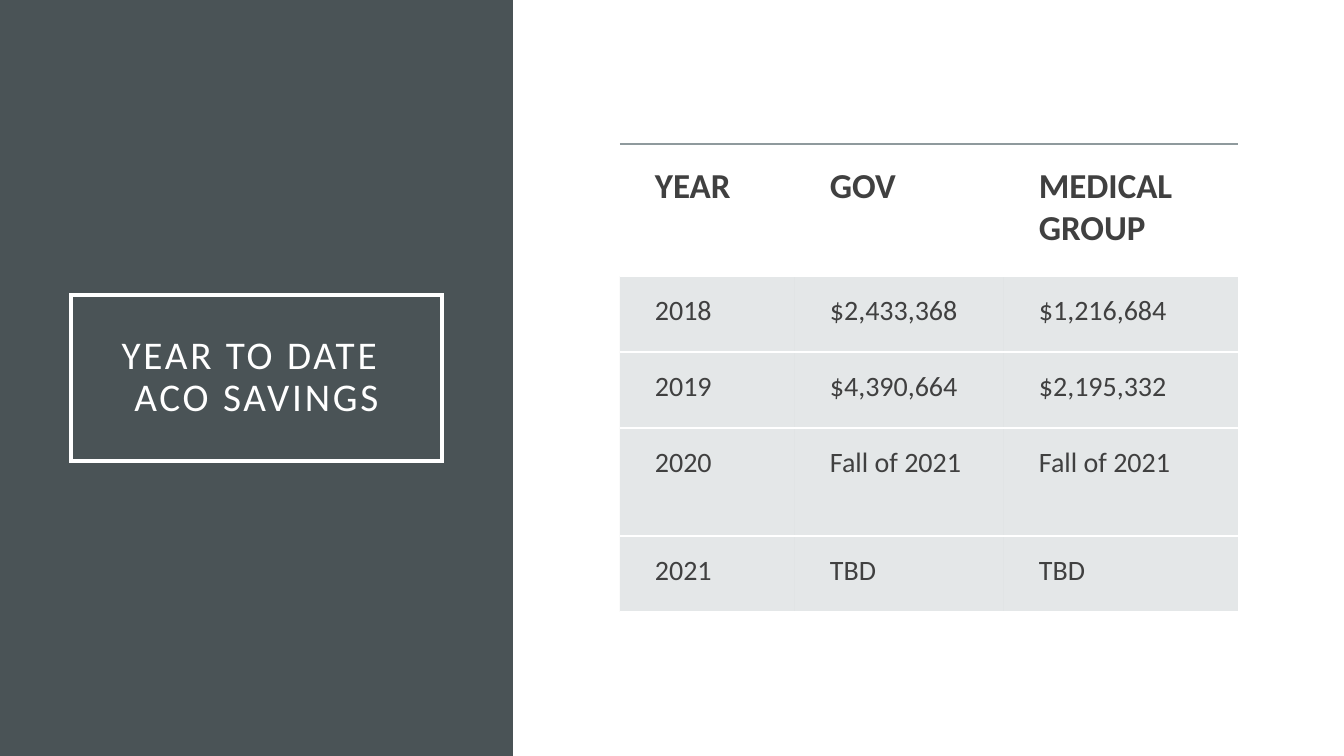
from dataclasses import dataclass
from lxml.etree import SubElement
from pptx import Presentation
from pptx.dml.color import RGBColor
from pptx.enum.shapes import MSO_SHAPE
from pptx.enum.text import MSO_ANCHOR, PP_ALIGN
from pptx.oxml import parse_xml
from pptx.oxml.ns import nsdecls, qn
from pptx.util import Pt

SCALE = 914400 / 100.8


@dataclass(frozen=True)
class Theme:
    """Colours, font and type sizes."""
    panel: str = "4A5356"
    white: str = "FFFFFF"
    ink: str = "404040"
    rule: str = "8F9A9D"
    band: str = "B4BCBE"
    font: str = "Calibri"
    title: int = 28
    head: int = 25
    body: int = 20


THEME = Theme()
ROWS = [
    ("YEAR", "GOV", "MEDICAL GROUP"),
    ("2018", "$2,433,368", "$1,216,684"),
    ("2019", "$4,390,664", "$2,195,332"),
    ("2020", "Fall of 2021", "Fall of 2021"),
    ("2021", "TBD", "TBD"),
]
WIDTHS = (175, 209, 234)
HEIGHTS = (132, 76, 76, 108, 76)


def px(num):
    """Turn px into EMU."""
    return round(num * SCALE)


def write(frame, text, size, color, bold=False, align=PP_ALIGN.LEFT, lead=1.0, space=0):
    """Put formatted text into a text frame."""
    para = frame.paragraphs[0]
    para.text = text
    para.alignment = align
    para.line_spacing = lead
    for run in para.runs:
        font = run.font
        font.name, font.size, font.bold = THEME.font, Pt(size), bold
        font.color.rgb = RGBColor.from_string(color)
        if space:
            run._r.get_or_add_rPr().set("spc", str(space * 100))


def inset(item, left, rest):
    """Set the margins of a cell or text frame."""
    item.margin_left = px(left)
    item.margin_top = item.margin_right = item.margin_bottom = px(rest)


def block(slide, box, fill=None, line=None):
    """Draw a plain rectangle."""
    shape = slide.shapes.add_shape(MSO_SHAPE.RECTANGLE, *map(px, box))
    shape.shadow.inherit = False
    if fill:
        shape.fill.solid()
        shape.fill.fore_color.rgb = RGBColor.from_string(fill)
    else:
        shape.fill.background()
    if line:
        shape.line.color.rgb = RGBColor.from_string(line)
        shape.line.width = Pt(2.5)
        SubElement(shape.line._get_or_add_ln(), qn("a:miter"), lim="800000")
    else:
        shape.line.fill.background()
    return shape


def edge(cell, top, base):
    """Give a cell its top and base lines and no side lines."""
    props = cell._tc.get_or_add_tcPr()
    sides = (("lnL", None), ("lnR", None), ("lnT", top), ("lnB", base))
    for spot, (tag, color) in enumerate(sides):
        line = parse_xml(f'<a:{tag} {nsdecls("a")} w="{Pt(1.5)}"/>')
        if color:
            fill = SubElement(line, qn("a:solidFill"))
            tone = SubElement(fill, qn("a:srgbClr"), val=color)
            if color == THEME.rule:
                SubElement(tone, qn("a:alpha"), val="60000")
        else:
            SubElement(line, qn("a:noFill"))
        props.insert(spot, line)


def shade(cell):
    """Give a cell the pale band fill."""
    cell.fill.solid()
    cell.fill.fore_color.rgb = RGBColor.from_string(THEME.band)
    tone = cell._tc.tcPr.find(".//" + qn("a:srgbClr"))
    SubElement(tone, qn("a:alpha"), val="35000")


def panel(slide, box):
    """Draw the dark panel with its framed title."""
    left, top, _, _ = box
    block(slide, box, fill=THEME.panel)
    frame = block(slide, (left + 71, top + 295, 371, 166), line=THEME.white).text_frame
    frame.word_wrap = True
    frame.vertical_anchor = MSO_ANCHOR.MIDDLE
    inset(frame, 20, 20)
    write(frame, "YEAR TO DATE \vACO SAVINGS", THEME.title, THEME.white,
          align=PP_ALIGN.CENTER, lead=0.9, space=2)


def savings(slide, box):
    """Draw the savings table."""
    table = slide.shapes.add_table(len(ROWS), len(WIDTHS), *map(px, box)).table
    table.horz_banding = False
    for col, width in zip(table.columns, WIDTHS):
        col.width = px(width)
    for row, height, texts in zip(table.rows, HEIGHTS, ROWS):
        row.height = px(height)
        head = texts is ROWS[0]
        for cell, text in zip(row.cells, texts):
            inset(cell, 35, 21 if head else 18)
            size = THEME.head if head else THEME.body
            write(cell.text_frame, text, size, THEME.ink, bold=head)
            if head:
                cell.fill.background()
            else:
                shade(cell)
            edge(cell, THEME.rule if head else THEME.white, THEME.white)


def main():
    """Build and save the slide."""
    deck = Presentation()
    deck.slide_width, deck.slide_height = px(1344), px(756)
    slide = deck.slides.add_slide(deck.slide_layouts[6])
    panel(slide, (0, 0, 513, 756))
    savings(slide, (620, 144, sum(WIDTHS), sum(HEIGHTS)))
    deck.save("out.pptx")


if __name__ == "__main__":
    main()
